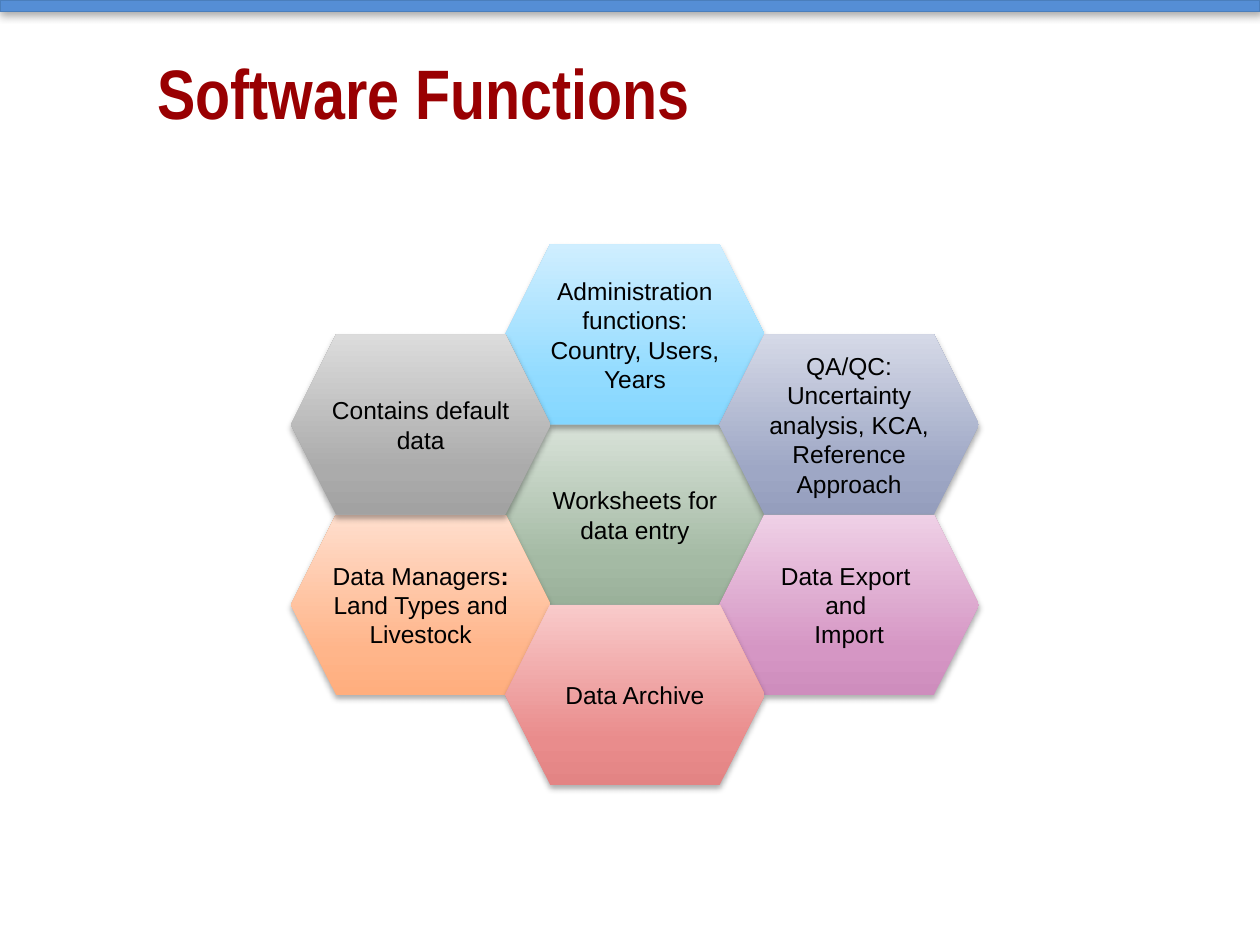
from copy import deepcopy

from lxml import etree
from pptx import Presentation
from pptx.dml.color import RGBColor
from pptx.enum.shapes import MSO_SHAPE
from pptx.enum.text import MSO_ANCHOR, PP_ALIGN
from pptx.oxml.ns import qn
from pptx.util import Inches, Pt

RECTANGLE, HEXAGON = MSO_SHAPE.RECTANGLE, MSO_SHAPE.HEXAGON
MIDDLE, CENTER = MSO_ANCHOR.MIDDLE, PP_ALIGN.CENTER

# Honeycomb grid: neighbouring columns are offset by half a cell
COMB_LEFT, COMB_TOP = 2.31, 1.94
CELL_W, CELL_H = 2.06, 1.43
COLUMN_STEP, ROW_STEP = 1.70, CELL_H / 2

TITLE_FONT = {"name": "Arial Narrow", "size": Pt(40), "bold": True}
CELL_FONT = {"name": "Arial", "size": Pt(14), "bold": False}
NO_MARGINS = {f"margin_{side}": 0 for side in ("left", "top", "right", "bottom")}

# Column, row, gradient from bottom to top, paragraphs of (text, bold) runs
FUNCTIONS = [
    (1, 2, ("9AB19A", "A4BAA4", "D8E2D8"), [[("Worksheets for data entry", False)]]),
    (0, 3, ("FFAE7E", "FFB58A", "FFDECD"),
     [[("Data Managers", False), (": ", True), ("Land Types and Livestock", False)]]),
    (1, 0, ("84D7FF", "91DBFF", "CFEEFF"),
     [[("Administration functions: Country, Users, Years", False)]]),
    (2, 1, ("959EBD", "9EA7C5", "D5D9E7"),
     [[("QA/QC: Uncertainty analysis, KCA, Reference Approach", False)]]),
    (2, 3, ("CE8DBD", "D596C4", "EFD0E6"),
     [[("Data Export ", False)], [("and ", False)], [("Import", False)]]),
    (1, 4, ("E38484", "E98C8C", "F9CACA"), [[("Data Archive", False)]]),
    (0, 1, ("A2A2A2", "ABABAB", "DCDCDC"), [[("Contains default data", False)]]),
]


def rgb(color):
    return RGBColor.from_string(color)


def set_values(target, values):
    for name, value in values.items():
        setattr(target, name, value)


def add_run(paragraph, text, font, color):
    run = paragraph.add_run()
    run.text = text
    set_values(run.font, font)
    run.font.color.rgb = rgb(color)


def add_shadow(shape, opacity, blur, distance):
    """Give the shape a soft black shadow straight below it."""
    shape.shadow.inherit = False
    effects = shape._element.spPr.find(qn("a:effectLst"))
    shadow = etree.SubElement(
        effects, qn("a:outerShdw"), blurRad=str(Pt(blur)), dist=str(Pt(distance)),
        dir="5400000", rotWithShape="0")
    black = etree.SubElement(shadow, qn("a:srgbClr"), val="000000")
    etree.SubElement(black, qn("a:alpha"), val=str(opacity * 1000))


def fill_gradient(shape, colors):
    """Run three colours upwards from the bottom edge."""
    shape.fill.gradient()
    shape.fill.gradient_angle = 90
    stop_list = shape._element.spPr.find(".//" + qn("a:gsLst"))
    stop_list.append(deepcopy(stop_list[0]))
    for stop, position, color in zip(shape.fill.gradient_stops, (0, 0.25, 1), colors):
        stop.position = position
        stop.color.rgb = rgb(color)


def add_top_bar(slide):
    bar = slide.shapes.add_shape(RECTANGLE, 0, 0, Inches(10), Inches(0.09))
    bar.fill.solid()
    bar.fill.fore_color.rgb = rgb("558ED5")
    bar.line.color.rgb = rgb("4A7EBB")
    bar.line.width = Pt(0.75)
    add_shadow(bar, 35, 5, 1.8)


def add_title(slide, text):
    title = slide.shapes.add_textbox(Inches(1.15), Inches(0.18), Inches(8.66), Inches(1.1))
    set_values(title.text_frame, {"word_wrap": True, "vertical_anchor": MIDDLE})
    add_run(title.text_frame.paragraphs[0], text, TITLE_FONT, "990002")


def add_function(slide, column, row, colors, paragraphs):
    cell = slide.shapes.add_shape(
        HEXAGON, Inches(COMB_LEFT + column * COLUMN_STEP),
        Inches(COMB_TOP + row * ROW_STEP), Inches(CELL_W), Inches(CELL_H))
    fill_gradient(cell, colors)
    cell.line.fill.background()
    add_shadow(cell, 32, 3.5, 2.2)

    frame = cell.text_frame
    set_values(frame, {"word_wrap": True, "vertical_anchor": MIDDLE, **NO_MARGINS})
    for index, runs in enumerate(paragraphs):
        paragraph = frame.add_paragraph() if index else frame.paragraphs[0]
        paragraph.alignment = CENTER
        for text, bold in runs:
            add_run(paragraph, text, {**CELL_FONT, "bold": bold}, "000000")


def main():
    presentation = Presentation()
    presentation.slide_width, presentation.slide_height = Inches(10), Inches(7.5)
    slide = presentation.slides.add_slide(presentation.slide_layouts[6])
    add_top_bar(slide)
    add_title(slide, "Software Functions")
    for function in FUNCTIONS:
        add_function(slide, *function)
    presentation.save("out.pptx")


if __name__ == "__main__":
    main()
